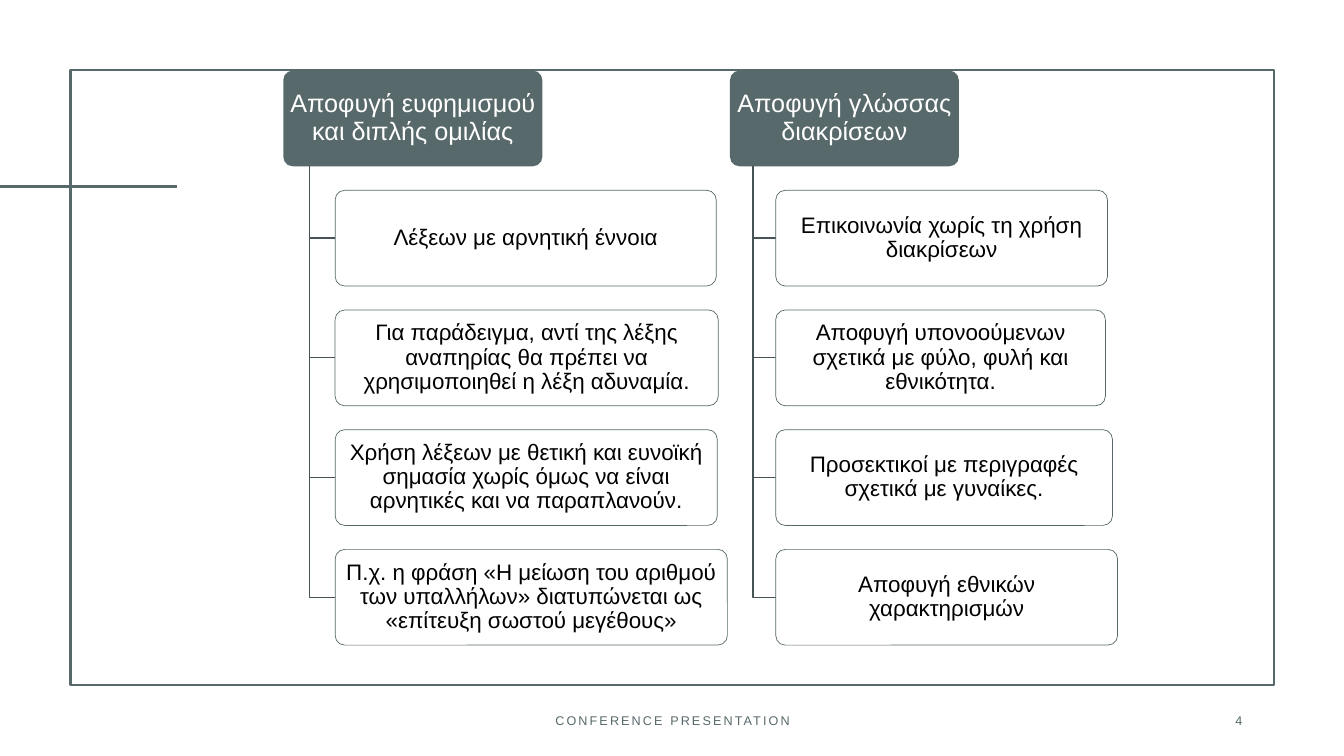
"""Build a slide with two hierarchies of advice on careful wording."""
from lxml import etree
from pptx import Presentation
from pptx import util as u
from pptx.dml.color import RGBColor
from pptx.enum import shapes, text
from pptx.oxml import ns

FONT = "Arial"
SLATE, DARK_SLATE, WHITE, BLACK = "58696B", "465456", "FFFFFF", "000000"
TOP, BOX_HEIGHT, PITCH = 0.7, 0.95, 4.75 / 4

COLUMNS = [
    {"left": 2.81, "width": 2.57, "heading": "Αποφυγή ευφημισμού και διπλής ομιλίας",
     "items": [
         ("Λέξεων με αρνητική έννοια", 3.78),
         ("Για παράδειγμα, αντί της λέξης αναπηρίας θα πρέπει να "
          "χρησιμοποιηθεί η λέξη αδυναμία.", 3.8),
         ("Χρήση λέξεων με θετική και ευνοϊκή σημασία χωρίς όμως να είναι "
          "αρνητικές και να παραπλανούν.", 3.79),
         ("Π.χ. η φράση «Η μείωση του αριθμού των υπαλλήλων» διατυπώνεται ως "
          "«επίτευξη σωστού μεγέθους»", 3.89)]},
    {"left": 7.24, "width": 2.27, "heading": "Αποφυγή γλώσσας διακρίσεων",
     "items": [
         ("Επικοινωνία χωρίς τη χρήση διακρίσεων", 3.29),
         ("Αποφυγή υπονοούμενων σχετικά με φύλο, φυλή και εθνικότητα.", 3.27),
         ("Προσεκτικοί με περιγραφές σχετικά με γυναίκες.", 3.34),
         ("Αποφυγή εθνικών χαρακτηρισμών", 3.39)]},
]
FOOTERS = [
    ("CONFERENCE PRESENTATION", 4.42, 4.5, text.PP_ALIGN.CENTER),
    ("4", 9.42, 3, text.PP_ALIGN.RIGHT),
]


def color(value):
    return RGBColor.from_string(value)


def set_line(shape, value, width):
    shape.line.color.rgb = color(value)
    shape.line.width = u.Pt(width)


def write(shape, words, size, value, align=text.PP_ALIGN.CENTER):
    frame = shape.text_frame
    frame.word_wrap = True
    frame.vertical_anchor = text.MSO_ANCHOR.MIDDLE
    paragraph = frame.paragraphs[0]
    paragraph.alignment = align
    run = paragraph.add_run()
    run.text = words
    run.font.name = FONT
    run.font.size = u.Pt(size)
    run.font.color.rgb = color(value)
    return paragraph


def add_box(slide, left, top, width, words, size, value, insets):
    box = slide.shapes.add_shape(
        shapes.MSO_SHAPE.ROUNDED_RECTANGLE, u.Inches(left), u.Inches(top),
        u.Inches(width), u.Inches(BOX_HEIGHT))
    box.adjustments[0] = 0.1
    box.shadow.inherit = False
    box.fill.solid()
    frame = box.text_frame
    frame.margin_left = frame.margin_right = u.Inches(insets[0])
    frame.margin_top = frame.margin_bottom = u.Inches(insets[1])
    write(box, words, size, value).line_spacing = 0.9
    return box


def add_heading(slide, column):
    box = add_box(slide, column["left"], TOP, column["width"],
                  column["heading"], 18, WHITE, (0.04, 0.03))
    box.fill.fore_color.rgb = color(SLATE)
    box.line.fill.background()


def add_item(slide, left, top, width, words):
    box = add_box(slide, left, top, width, words, 16, BLACK, (0.03, 0.02))
    box.fill.fore_color.rgb = color(WHITE)
    fill_color = box.fill._xPr.find(".//" + ns.qn("a:srgbClr"))
    etree.SubElement(fill_color, ns.qn("a:alpha"), val="90000")
    set_line(box, SLATE, 0.5)


def add_elbow(slide, spine, end, middle):
    builder = slide.shapes.build_freeform(u.Inches(spine), u.Inches(TOP + BOX_HEIGHT))
    builder.add_line_segments(
        [(u.Inches(spine), u.Inches(middle)), (u.Inches(end), u.Inches(middle))],
        close=False)
    elbow = builder.convert_to_shape()
    elbow.shadow.inherit = False
    elbow.fill.background()
    set_line(elbow, DARK_SLATE, 1)


def add_column(slide, column):
    add_heading(slide, column)
    spine = column["left"] + column["width"] * 0.1
    item_left = column["left"] + column["width"] * 0.2
    for row, (words, width) in enumerate(column["items"], 1):
        top = TOP + row * PITCH
        add_elbow(slide, spine, item_left, top + BOX_HEIGHT / 2)
        add_item(slide, item_left, top, width, words)


def add_frame(slide):
    accent = slide.shapes.add_connector(
        shapes.MSO_CONNECTOR.STRAIGHT, 0, u.Inches(1.85), u.Inches(1.76), u.Inches(1.85))
    set_line(accent, SLATE, 1.5)
    etree.SubElement(accent._element.spPr, ns.qn("a:effectLst"))
    for words, left, width, align in FOOTERS:
        footer = slide.shapes.add_textbox(
            u.Inches(left), u.Inches(6.95), u.Inches(width), u.Inches(0.4))
        paragraph = write(footer, words, 9, SLATE, align)
        paragraph.runs[0].font._element.set("spc", "150")
    border = slide.shapes.add_shape(
        shapes.MSO_SHAPE.RECTANGLE, u.Inches(0.7), u.Inches(0.69),
        u.Inches(11.94), u.Inches(6.11))
    border.shadow.inherit = False
    border.fill.background()
    set_line(border, SLATE, 1.5)


def main():
    presentation = Presentation()
    presentation.slide_width = u.Inches(13.33)
    presentation.slide_height = u.Inches(7.5)
    slide = presentation.slides.add_slide(presentation.slide_layouts[6])
    slide.background.fill.solid()
    slide.background.fill.fore_color.rgb = color(WHITE)
    add_frame(slide)
    for column in COLUMNS:
        add_column(slide, column)
    presentation.save("out.pptx")


if __name__ == "__main__":
    main()
